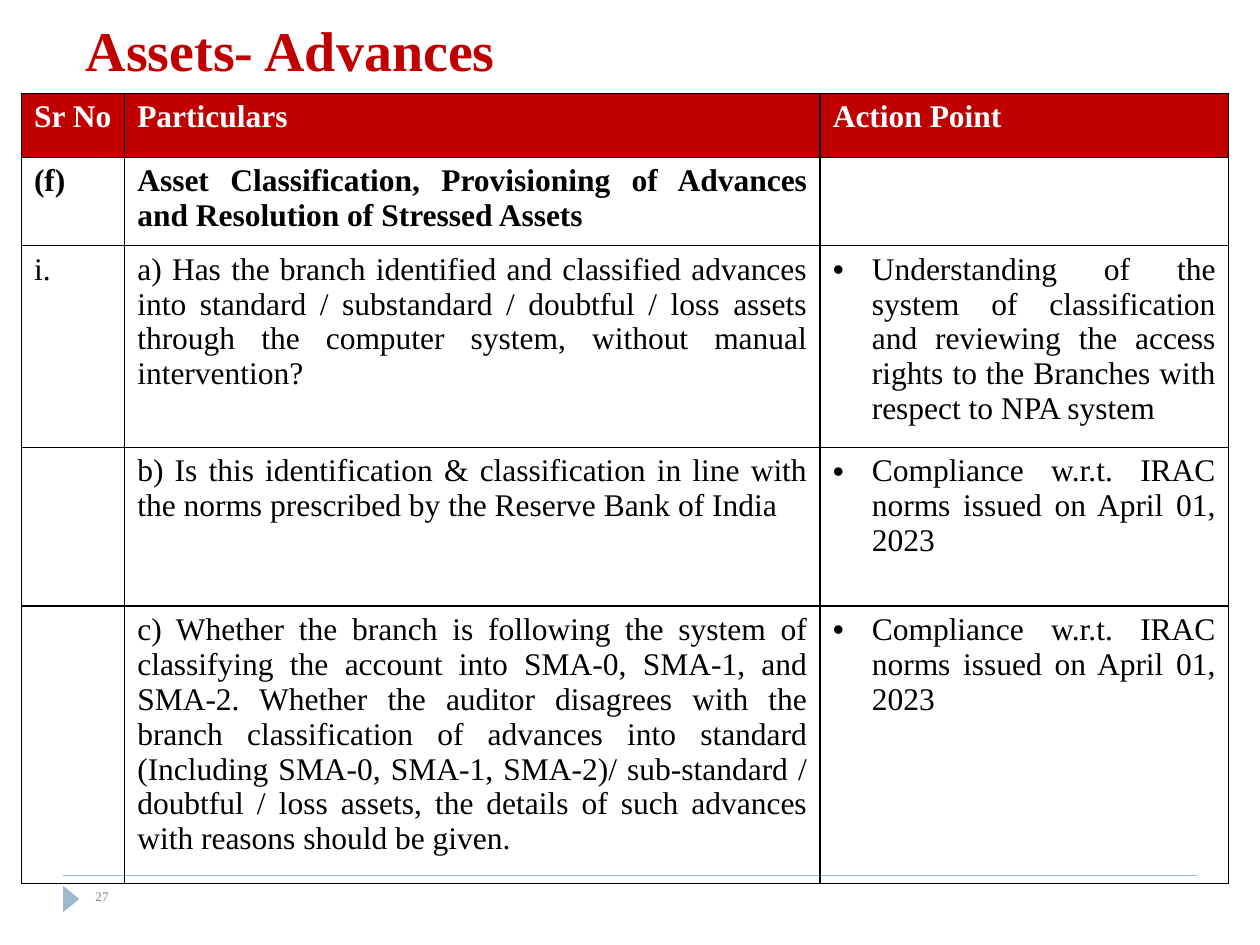
from pptx import Presentation
from pptx.dml.color import RGBColor
from pptx.enum.shapes import MSO_CONNECTOR as Connector, MSO_SHAPE as Shape
from pptx.enum.text import MSO_ANCHOR as Anchor, MSO_AUTO_SIZE as AutoSize, PP_ALIGN as Align
from pptx.oxml import parse_xml
from pptx.oxml.ns import nsdecls
from pptx.util import Inches, Pt
from lxml.etree import SubElement
from dataclasses import dataclass


@dataclass(frozen=True)
class Theme:
    font: str = "Times New Roman"
    red: str = "C00000"
    white: str = "FFFFFF"
    black: str = "000000"
    blue: str = "9FB8CD"
    gray: str = "808080"
    title: float = 32
    body: float = 18
    number: float = 7.5


theme = Theme()


def style(para, size, color, bold=False, align=Align.LEFT):
    para.alignment = align
    para.font.name = theme.font
    para.font.size = Pt(size)
    para.font.bold = bold
    para.font.color.rgb = RGBColor.from_string(color)


def add_borders(cell):
    props = cell._tc.get_or_add_tcPr()
    for index, side in enumerate(("lnL", "lnR", "lnT", "lnB")):
        props.insert(index, parse_xml(
            f'<a:{side} {nsdecls("a")} w="{Pt(1)}"><a:solidFill>'
            f'<a:srgbClr val="{theme.black}"/></a:solidFill></a:{side}>'))


deck = Presentation()
deck.slide_width, deck.slide_height = Inches(10), Inches(7.5)
page = deck.slides.add_slide(deck.slide_layouts[5])

# Grid of the table
columns = [0.82, 5.52, 3.24]
rows = [0.51, 0.69, 1.58, 1.26, 2.17]
left, top = 0.17, 0.74
bottom = top + sum(rows)
margin = 0.5

# Rules under the header row and at the foot
for y in (top + rows[0], bottom):
    rule = page.shapes.add_connector(
        Connector.STRAIGHT, Inches(margin), Inches(y), deck.slide_width - Inches(margin), Inches(y))
    rule.line.color.rgb = RGBColor.from_string(theme.blue)
    rule.line.width = Pt(0.75)
    SubElement(rule._element.spPr, "{http://schemas.openxmlformats.org/drawingml/2006/main}effectLst")

# Page marker and number
marker = page.shapes.add_shape(
    Shape.ISOSCELES_TRIANGLE, Inches(0.46), Inches(7.07), Inches(0.21), Inches(0.13))
marker.rotation = 90
marker.shadow.inherit = False
marker.fill.solid()
marker.fill.fore_color.rgb = RGBColor.from_string(theme.blue)
marker.line.fill.background()

number = page.shapes.add_textbox(Inches(0.66), Inches(7), Inches(4.33), Inches(0.3)).text_frame
number.word_wrap = True
number.text = "27"
style(number.paragraphs[0], theme.number, theme.gray)

# Title
title = page.shapes.title
title.left, title.top, title.width, title.height = map(Inches, (0.58, 0.13, 9, 0.58))
title.text_frame.text = "Assets- Advances"
title.text_frame.auto_size = AutoSize.NONE
title.text_frame.vertical_anchor = Anchor.BOTTOM
style(title.text_frame.paragraphs[0], theme.title, theme.red, bold=True)

# Table content
compliance = "Compliance w.r.t. IRAC norms issued on April 01, 2023"
content = [
    ("Sr No", "Particulars", "Action Point"),
    ("(f)", "Asset Classification, Provisioning of Advances and Resolution of Stressed Assets", ""),
    ("i.",
     "a) Has the branch identified and classified advances into standard / substandard / "
     "doubtful / loss assets through the computer system, without manual intervention?",
     "Understanding of the system of classification and reviewing the access rights to the "
     "Branches with respect to NPA system"),
    ("",
     "b) Is this identification & classification in line with the norms prescribed by the "
     "Reserve Bank of India",
     compliance),
    ("",
     "c) Whether the branch is following the system of classifying the account into SMA-0, "
     "SMA-1, and SMA-2. Whether the auditor disagrees with the branch classification of "
     "advances into standard (Including SMA-0, SMA-1, SMA-2)/ sub-standard / doubtful / loss "
     "assets, the details of such advances with reasons should be given.",
     compliance),
]

table = page.shapes.add_table(
    len(rows), len(columns), Inches(left), Inches(top),
    Inches(sum(columns)), Inches(sum(rows))).table
table.horz_banding = False
for column, width in zip(table.columns, columns):
    column.width = Inches(width)
for row, height in zip(table.rows, rows):
    row.height = Inches(height)

for r, texts in enumerate(content):
    for c, text in enumerate(texts):
        cell = table.cell(r, c)
        cell.text = text
        para = cell.text_frame.paragraphs[0]
        style(para, theme.body, theme.black if r else theme.white, bold=r < 2, align=Align.JUSTIFY)
        if r == 0:
            cell.fill.solid()
            cell.fill.fore_color.rgb = RGBColor.from_string(theme.red)
        else:
            cell.fill.background()
        add_borders(cell)
        # Bulleted action points
        if text and r > 1 and c == 2:
            props = para._p.get_or_add_pPr()
            props.set("marL", str(Inches(0.31)))
            props.set("indent", str(-Inches(0.31)))
            props.insert(0, parse_xml(f'<a:buChar {nsdecls("a")} char="•"/>'))
            props.insert(0, parse_xml(f'<a:buFont {nsdecls("a")} typeface="Arial"/>'))

deck.save("out.pptx")
